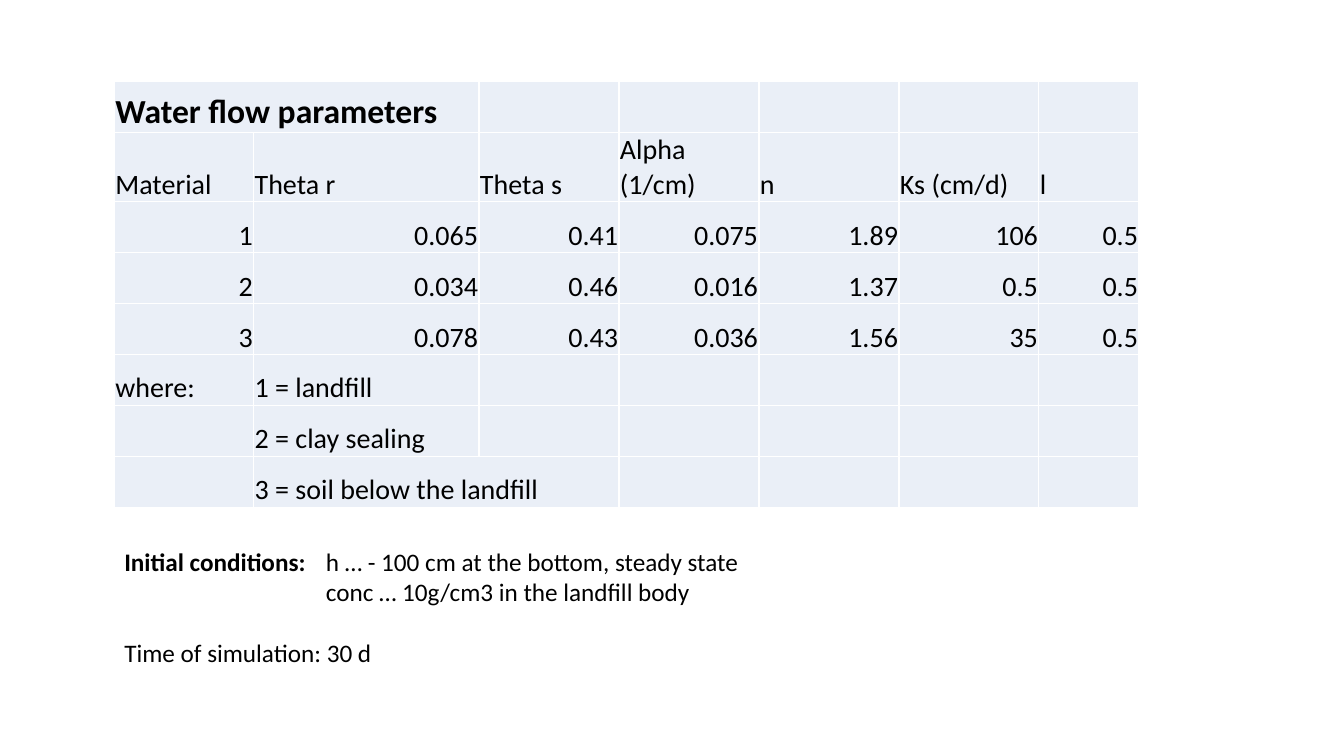
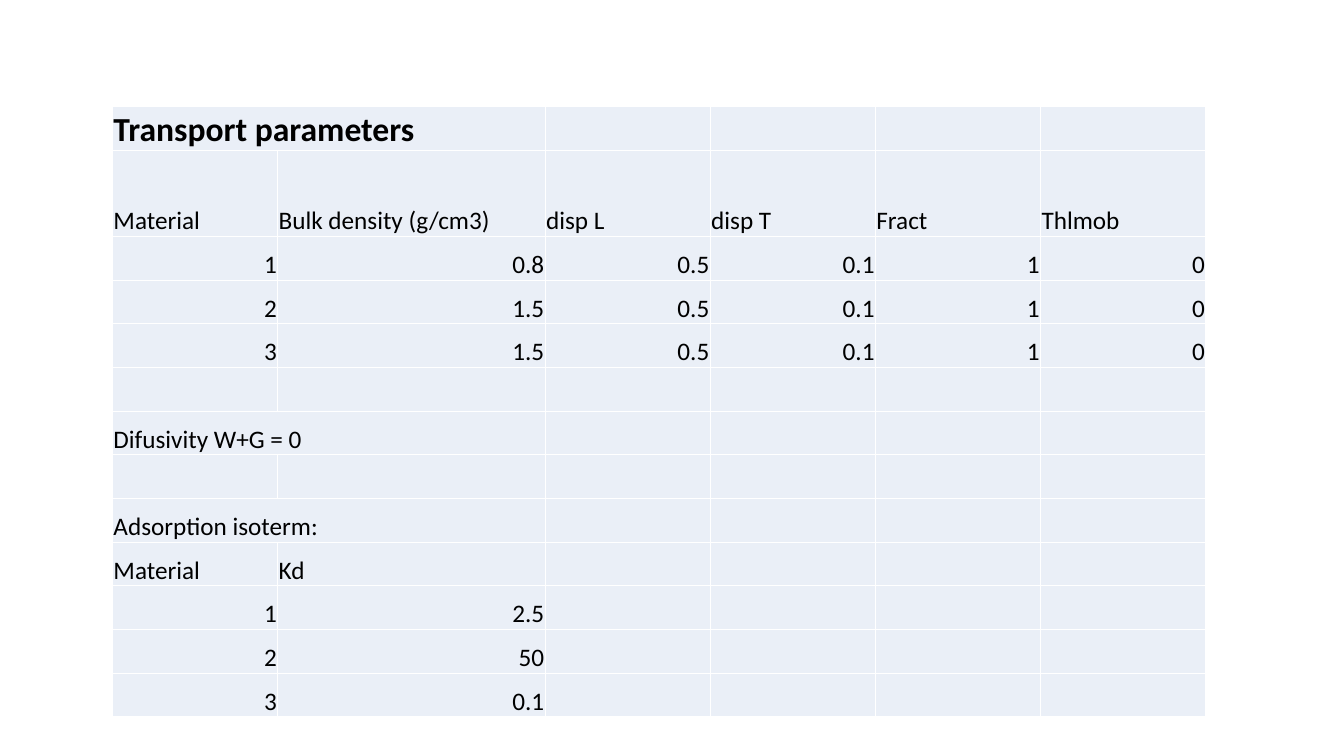
"""Build two slides of water flow and transport model parameters."""
import pptx
import pptx.dml.color
import pptx.enum.text
import pptx.util

Pt = pptx.util.Pt
RIGHT = pptx.enum.text.PP_ALIGN.RIGHT

THEME = {
    "font": "Calibri",
    "ink": pptx.dml.color.RGBColor.from_string("000000"),
    "cell_fill": pptx.dml.color.RGBColor.from_string("EAEFF7"),
    "heading_size": Pt(24),
    "note_size": Pt(18),
}
CELL_FORMAT = {
    "margin_left": Pt(0.7),
    "margin_right": Pt(0.7),
    "margin_top": Pt(0.7),
    "margin_bottom": Pt(0),
    "vertical_anchor": pptx.enum.text.MSO_ANCHOR.BOTTOM,
}
TABLES = [
    {
        "left": 81.7,
        "top": 58,
        "widths": [99.5, 161] + [100] * 4 + [71.5],
        "heights": [36.4, 49.4] + [36.4] * 6,
        "size": Pt(20),
        "merges": [(0, 0), (7, 1)],
        "rows": [
            ["Water flow parameters"],
            ["Material", "Theta r", "Theta s", "Alpha (1/cm)", "n", "Ks (cm/d)", "l"],
            ["1", "0.065", "0.41", "0.075", "1.89", "106", "0.5"],
            ["2", "0.034", "0.46", "0.016", "1.37", "0.5", "0.5"],
            ["3", "0.078", "0.43", "0.036", "1.56", "35", "0.5"],
            ["where:", "1 = landfill"],
            ["", "2 = clay sealing"],
            ["", "3 = soil below the landfill"],
        ],
    },
    {
        "left": 80.4,
        "top": 76.2,
        "widths": [118, 191] + [118] * 4,
        "heights": [31.2, 61.6] + [31.2] * 11,
        "size": Pt(18),
        "merges": [(0, 0), (6, 0), (8, 0)],
        "rows": [
            ["Transport parameters"],
            ["Material", "Bulk density (g/cm3)", "disp L", "disp T", "Fract", "Thlmob"],
            ["1", "0.8", "0.5", "0.1", "1", "0"],
            ["2", "1.5", "0.5", "0.1", "1", "0"],
            ["3", "1.5", "0.5", "0.1", "1", "0"],
            [],
            ["Difusivity W+G = 0"],
            [],
            ["Adsorption isoterm:"],
            ["Material", "Kd"],
            ["1", "2.5"],
            ["2", "50"],
            ["3", "0.1"],
        ],
    },
]
NOTES = [
    {"spans": [("Initial conditions: ", True),
               ("\th … - 100 cm at the bottom, steady state", False)]},
    {"spans": [("conc … 10g/cm3 in the landfill body", False)], "indent": 144},
    {"spans": [("Time of simulation: 30 d", False)], "space_before": 21.6},
]


def add_span(para, text, size, bold):
    """Append one formatted run to a paragraph."""
    span = para.add_run()
    span.text = text
    span.font.color.rgb = THEME["ink"]
    for name, value in {"name": THEME["font"], "size": size, "bold": bold}.items():
        setattr(span.font, name, value)


deck = pptx.Presentation()
deck.slide_width, deck.slide_height = Pt(960), Pt(540)
blank = deck.slide_layouts[6]

for content in TABLES:
    slide = deck.slides.add_slide(blank)
    widths, heights = content["widths"], content["heights"]
    table = slide.shapes.add_table(
        len(heights), len(widths), Pt(content["left"]), Pt(content["top"]),
        Pt(sum(widths)), Pt(sum(heights))).table
    table.first_row = False
    table.horz_banding = False
    for column, width in zip(table.columns, widths):
        column.width = Pt(width)
    for row, height in zip(table.rows, heights):
        row.height = Pt(height)
    for row, column in content["merges"]:
        table.cell(row, column).merge(table.cell(row, column + 1))
    for cell in table.iter_cells():
        cell.fill.solid()
        cell.fill.fore_color.rgb = THEME["cell_fill"]
        for name, value in CELL_FORMAT.items():
            setattr(cell, name, value)
    for row, texts in enumerate(content["rows"]):
        heading = row == 0
        size = THEME["heading_size"] if heading else content["size"]
        for column, text in enumerate(texts):
            if text:
                para = table.cell(row, column).text_frame.paragraphs[0]
                add_span(para, text, size, heading)
                if text.replace(".", "").isdigit():
                    para.alignment = RIGHT

box = deck.slides[0].shapes.add_textbox(Pt(81.7), Pt(386.6), Pt(458.6), Pt(94.3))
frame = box.text_frame
frame.word_wrap = True
for index, note in enumerate(NOTES):
    para = frame.add_paragraph() if index else frame.paragraphs[0]
    if "indent" in note:
        para._p.get_or_add_pPr().set("marL", str(Pt(note["indent"])))
    if "space_before" in note:
        para.space_before = Pt(note["space_before"])
    for text, bold in note["spans"]:
        add_span(para, text, THEME["note_size"], bold)

deck.save("out.pptx")
